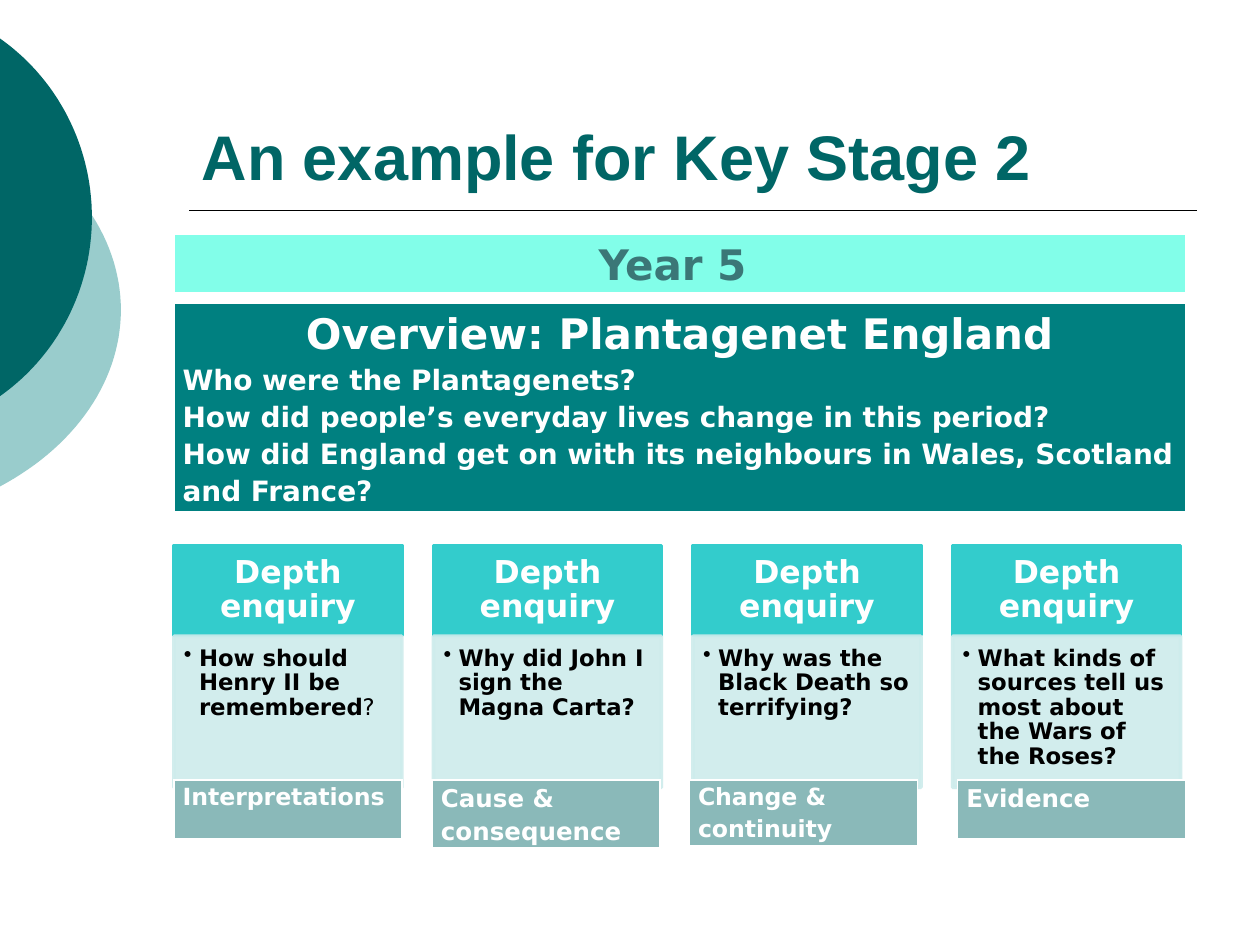
import math
import pptx
import pptx.util
import pptx.dml.color
import pptx.enum.shapes
import pptx.enum.text
import pptx.oxml.ns
import lxml.etree

Inches, Pt = pptx.util.Inches, pptx.util.Pt
ALIGN, ANCHOR = pptx.enum.text.PP_ALIGN, pptx.enum.text.MSO_ANCHOR
COLORS = {"dark": "006666", "pale": "99CCCC", "black": "000000", "white": "FFFFFF",
          "head": "33CCCC", "body": "CEECEC", "overview": "008080",
          "year": "82FEE9", "year_text": "3B7777", "skill": "8AB9B9"}
TITLE = "An example for Key Stage 2"
YEAR = "Year 5 "
OVERVIEW = "Overview: Plantagenet England"
QUESTIONS = ["Who were the Plantagenets?",
             "How did people’s everyday lives change in this period?",
             "How did England get on with its neighbours in Wales, Scotland and France?"]
ENQUIRY = "Depth enquiry"
ENQUIRIES = [("How should Henry II be remembered", "?"),
             ("Why did John I sign the Magna Carta?", ""),
             ("Why was the Black Death so terrifying?", ""),
             ("What kinds of sources tell us most about the Wars of the Roses?", "")]
SKILLS = [(1.38, 0.47, 13.5, ["Interpretations"]),
          (3.43, 0.54, 14, ["Cause & consequence"]),
          (5.47, 0.52, 13.5, ["Change &", "continuity"]),
          (7.6, 0.47, 14, ["Evidence"])]
ELLIPSES = [(-1.29, 2.46, 2.25, 1.71, "pale"), (-0.96, 1.725, 1.69, 1.725, "dark")]
LEFT, WIDTH = 1.38, 8.03
CARD_W, CARD_STEP = 1.81, 2.06
ARC_STEPS = 60


def rgb(name):
    return pptx.dml.color.RGBColor.from_string(COLORS[name])


def write(p, text, size=16, color="white", bold=True, align=None, spacing=None,
          font="DejaVu Sans"):
    r = p.add_run()
    r.text = text
    r.font.size, r.font.bold, r.font.name = Pt(size), bold, font
    r.font.color.rgb = rgb(color)
    p.alignment = align or ALIGN.LEFT
    if spacing:
        p.line_spacing = spacing


def set_margins(target, left, top, right, bottom):
    target.margin_left, target.margin_top = Inches(left), Inches(top)
    target.margin_right, target.margin_bottom = Inches(right), Inches(bottom)


def add_arc(s, cx, cy, a, b, color):
    end = math.acos(-cx / a)
    angles = [end * (2 * i / ARC_STEPS - 1) for i in range(ARC_STEPS + 1)]
    points = [(Inches(cx + a * math.cos(t)), Inches(cy + b * math.sin(t))) for t in angles]
    fb = s.shapes.build_freeform(*points[0])
    fb.add_line_segments(points[1:], close=True)
    sp = fb.convert_to_shape()
    sp.shadow.inherit = False
    sp.fill.solid()
    sp.fill.fore_color.rgb = rgb(color)
    sp.line.fill.background()


def add_box(s, x, y, h, color, margins, anchor, alpha=None):
    sp = s.shapes.add_shape(pptx.enum.shapes.MSO_SHAPE.RECTANGLE,
                            Inches(x), Inches(y), Inches(CARD_W), Inches(h))
    sp.shadow.inherit = False
    sp.fill.solid()
    sp.fill.fore_color.rgb = rgb(color)
    sp.line.color.rgb = rgb(color)
    sp.line.width = Pt(2)
    if alpha:
        for clr in sp._element.spPr.iter(pptx.oxml.ns.qn("a:srgbClr")):
            lxml.etree.SubElement(clr, pptx.oxml.ns.qn("a:alpha"), val=str(alpha * 1000))
    tf = sp.text_frame
    tf.word_wrap, tf.vertical_anchor = True, anchor
    set_margins(tf, *margins)
    return tf.paragraphs[0]


def add_bullet(p, indent):
    pPr = p._p.get_or_add_pPr()
    pPr.set("marL", str(Inches(indent)))
    pPr.set("indent", str(-Inches(indent)))
    lxml.etree.SubElement(pPr, pptx.oxml.ns.qn("a:buChar"), char="•")


def add_band(s, x, y, w, h, color, lines):
    table = s.shapes.add_table(1, 1, Inches(x), Inches(y), Inches(w), Inches(h)).table
    cell = table.cell(0, 0)
    cell.fill.solid()
    cell.fill.fore_color.rgb = rgb(color)
    set_margins(cell, 0.07, 0, 0.07, 0)
    tf = cell.text_frame
    for i, (text, style) in enumerate(lines):
        p = tf.add_paragraph() if i else tf.paragraphs[0]
        write(p, text, spacing=1.15, **style)


def main():
    """Build the Key Stage 2 enquiry plan slide."""
    prs = pptx.Presentation()
    prs.slide_width, prs.slide_height = Inches(10), Inches(7.5)
    s = prs.slides.add_slide(prs.slide_layouts[5])
    for ellipse in ELLIPSES:
        add_arc(s, *ellipse)
    rule = s.shapes.add_connector(pptx.enum.shapes.MSO_CONNECTOR.STRAIGHT,
                                  Inches(1.5), Inches(1.67), Inches(9.5), Inches(1.67))
    rule.line.color.rgb = rgb("black")
    rule.line.width = Pt(1)
    lxml.etree.SubElement(rule._element.spPr, pptx.oxml.ns.qn("a:effectLst"))

    title = s.shapes.title
    title.left, title.top = Inches(1.5), Inches(0.33)
    title.width, title.height = Inches(8), Inches(1.25)
    title.text_frame.vertical_anchor = ANCHOR.BOTTOM
    write(title.text_frame.paragraphs[0], TITLE, size=36, color="dark", font="Arial")

    for i, (question, tail) in enumerate(ENQUIRIES):
        x = LEFT + i * CARD_STEP
        p = add_box(s, x, 4.33, 0.71, "head", (0.14, 0.08, 0.14, 0.08), ANCHOR.MIDDLE)
        write(p, ENQUIRY, size=18, align=ALIGN.CENTER, spacing=0.9)
        p = add_box(s, x, 5.05, 1.2, "body", (0.08, 0.08, 0.1, 0.11), ANCHOR.TOP, alpha=90)
        write(p, question, size=13, color="black", spacing=0.9)
        if tail:
            write(p, tail, size=13, color="black", bold=False, spacing=0.9)
        add_bullet(p, 0.12)

    heading = {"size": 24, "align": ALIGN.CENTER}
    add_band(s, LEFT, 2.41, WIDTH, 1.65, "overview",
             [(OVERVIEW, heading)] + [(q, {}) for q in QUESTIONS])
    add_band(s, LEFT, 1.86, WIDTH, 0.46, "year", [(YEAR, {**heading, "color": "year_text"})])
    for x, h, size, lines in SKILLS:
        add_band(s, x, 6.19, CARD_W, h, "skill", [(text, {"size": size}) for text in lines])
    prs.save("out.pptx")


if __name__ == "__main__":
    main()
